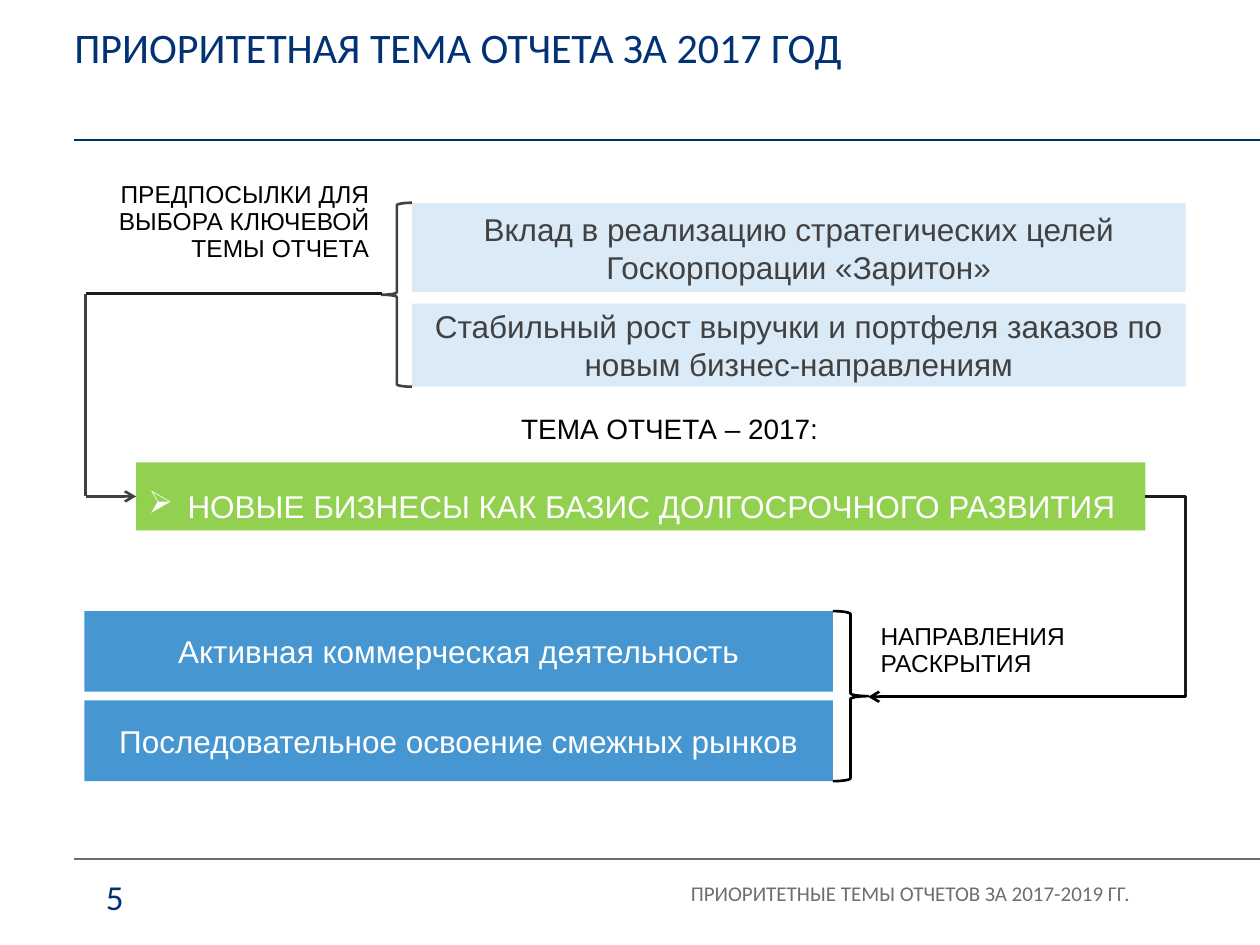
"""Build the slide on the priority theme of the 2017 report."""
import pptx
import pptx.dml.color
import pptx.enum.shapes
import pptx.enum.text
import pptx.oxml.ns
import pptx.util
from lxml import etree

RGBColor = pptx.dml.color.RGBColor
ALIGN = pptx.enum.text.PP_ALIGN
ANCHOR = pptx.enum.text.MSO_ANCHOR
SHAPE = pptx.enum.shapes.MSO_SHAPE
qn = pptx.oxml.ns.qn

NAVY = RGBColor(0x00, 0x32, 0x74)
GRAY = RGBColor(0x6D, 0x6E, 0x71)
DARK = RGBColor(0x41, 0x41, 0x42)
INK = RGBColor(0x1B, 0x1B, 0x1C)
BLACK = RGBColor(0x00, 0x00, 0x00)
WHITE = RGBColor(0xFF, 0xFF, 0xFF)
PALE = RGBColor(0xDA, 0xEA, 0xF6)
BLUE = RGBColor(0x45, 0x96, 0xD1)
GREEN = RGBColor(0x92, 0xD0, 0x50)

PX = 9144
TITLE = "ПРИОРИТЕТНАЯ ТЕМА ОТЧЕТА ЗА 2017 ГОД"
THEME = "НОВЫЕ БИЗНЕСЫ КАК БАЗИС ДОЛГОСРОЧНОГО РАЗВИТИЯ"
THEME_BOX = (108, 367, 801, 54)
BOXES = [
    ("Вклад в реализацию стратегических целей Госкорпорации «Заритон»", (327, 161, 614, 71), PALE, DARK),
    ("Стабильный рост выручки и портфеля заказов по новым бизнес-направлениям", (327, 241, 614, 66), PALE, DARK),
    ("Активная коммерческая деятельность", (67, 485, 594, 64), BLUE, WHITE),
    ("Последовательное освоение смежных рынков", (67, 556, 594, 64), BLUE, WHITE),
]
BRACES = [
    (SHAPE.LEFT_BRACE, (303, 161, 24, 146), DARK),
    (SHAPE.RIGHT_BRACE, (661, 485, 28, 135), BLACK),
]
LABELS = [
    ("ТЕМА ОТЧЕТА – 2017:", (366, 324, 331, 35), 16, ALIGN.CENTER),
    ("ПРЕДПОСЫЛКИ ДЛЯ ВЫБОРА КЛЮЧЕВОЙ ТЕМЫ ОТЧЕТА", (67, 139, 236, 77), 14, ALIGN.RIGHT),
    ("НАПРАВЛЕНИЯ РАСКРЫТИЯ", (689, 490, 213, 55), 14, ALIGN.LEFT),
]
FOOTER = ("ПРИОРИТЕТНЫЕ ТЕМЫ ОТЧЕТОВ ЗА 2017-2019 ГГ.", (335, 701, 562, 46))
PAGE_NUMBER = ("5", (37, 690, 71, 39))
RULES = [(111, NAVY, 1), (682, GRAY, 1)]
LEFT_X, RIGHT_X = 68, 941
BRACE_Y, THEME_Y, TOPICS_Y = 233, 394, 553


def scale(values):
    return [value * PX for value in values]


def write(shape, text, size, color, align, font="Arial", spacing=None):
    frame = shape.text_frame
    frame.text = text
    frame.word_wrap = True
    paragraph = frame.paragraphs[0]
    paragraph.alignment = align
    if spacing is not None:
        paragraph.line_spacing = spacing
    run_font = paragraph.runs[0].font
    run_font.name, run_font.size = font, pptx.util.Pt(size)
    run_font.color.rgb = color
    return paragraph


def set_margins(frame, horizontal, vertical):
    frame.margin_left = frame.margin_right = horizontal * PX
    frame.margin_top = frame.margin_bottom = vertical * PX


def add_text(slide, text, box, *style):
    shape = slide.shapes.add_textbox(*scale(box))
    write(shape, text, *style)
    return shape


def add_box(slide, text, box, fill, color, align=ALIGN.CENTER, spacing=None):
    shape = slide.shapes.add_shape(SHAPE.RECTANGLE, *scale(box))
    shape.shadow.inherit = False
    shape.fill.solid()
    shape.fill.fore_color.rgb = fill
    shape.line.fill.background()
    shape.text_frame.vertical_anchor = ANCHOR.MIDDLE
    write(shape, text, 18, color, align, "Arial", spacing)
    return shape


def add_brace(slide, kind, box, color):
    shape = slide.shapes.add_shape(kind, *scale(box))
    shape.shadow.inherit = False
    shape.fill.background()
    shape.line.color.rgb = color
    shape.line.width = pptx.util.Pt(1.5)


def add_line(slide, points, color, width=1.5, arrow=False):
    kind = pptx.enum.shapes.MSO_CONNECTOR.STRAIGHT
    line = slide.shapes.add_connector(kind, *scale(points))
    line.line.color.rgb = color
    line.line.width = pptx.util.Pt(width)
    properties = line._element.spPr
    if arrow:
        etree.SubElement(properties.find(qn("a:ln")), qn("a:tailEnd"), type="arrow")
    etree.SubElement(properties, qn("a:effectLst"))
    return line


def add_bullet(paragraph, character, indent):
    properties = paragraph._p.get_or_add_pPr()
    properties.set("marL", str(indent * PX))
    properties.set("indent", str(-indent * PX))
    etree.SubElement(properties, qn("a:buChar"), char=character)


def main():
    presentation = pptx.Presentation()
    presentation.slide_width, presentation.slide_height = scale((1000, 750))
    slide = presentation.slides.add_slide(presentation.slide_layouts[5])

    title = slide.shapes.title
    title.left, title.top, title.width, title.height = scale((59, 13, 900, 94))
    title.text_frame.vertical_anchor = ANCHOR.TOP
    set_margins(title.text_frame, 0, 4)
    write(title, TITLE, 24, NAVY, ALIGN.LEFT, "Calibri")

    for y, color, width in RULES:
        add_line(slide, (59, y, 1000, y), color, width)
    for box in BOXES:
        add_box(slide, *box)
    for brace in BRACES:
        add_brace(slide, *brace)
    for text, box, size, align in LABELS:
        add_text(slide, text, box, size, BLACK, align, "Arial", 0.93)

    theme = add_box(slide, THEME, THEME_BOX, GREEN, WHITE, ALIGN.LEFT, 1.5)
    add_bullet(theme.text_frame.paragraphs[0], "➢", 31)

    add_line(slide, (303, BRACE_Y, LEFT_X, BRACE_Y), INK)
    add_line(slide, (LEFT_X, BRACE_Y, LEFT_X, THEME_Y), DARK)
    entry = add_line(slide, (LEFT_X, THEME_Y, 108, THEME_Y), DARK, arrow=True)
    entry.end_connect(theme, 1)
    leaving = add_line(slide, (909, THEME_Y, RIGHT_X, THEME_Y), INK)
    leaving.begin_connect(theme, 3)
    add_line(slide, (RIGHT_X, TOPICS_Y, RIGHT_X, THEME_Y), INK)
    add_line(slide, (RIGHT_X, TOPICS_Y, 689, TOPICS_Y), BLACK, arrow=True)

    footer = add_text(slide, *FOOTER, 12, GRAY, ALIGN.RIGHT, "Calibri", pptx.util.Pt(13))
    set_margins(footer.text_frame, 0, 0)
    add_text(slide, *PAGE_NUMBER, 20, NAVY, ALIGN.RIGHT, "Calibri")

    presentation.save("out.pptx")


if __name__ == "__main__":
    main()
